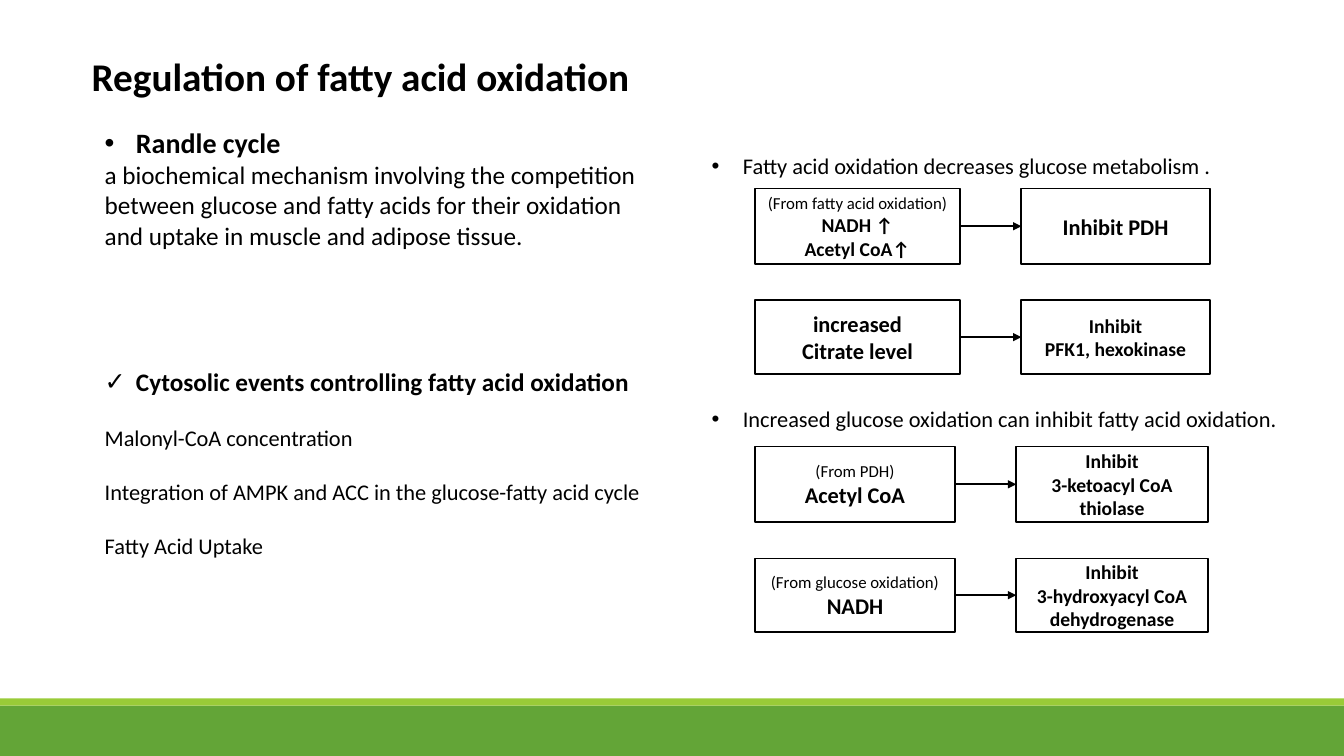
import pptx
import pptx.util
import pptx.dml.color
import pptx.enum.shapes
import pptx.enum.text
import pptx.oxml.ns
import lxml.etree

Inches, Pt = pptx.util.Inches, pptx.util.Pt
ALIGN, ANCHOR = pptx.enum.text.PP_ALIGN, pptx.enum.text.MSO_ANCHOR
RECTANGLE = pptx.enum.shapes.MSO_SHAPE.RECTANGLE
STRAIGHT = pptx.enum.shapes.MSO_CONNECTOR.STRAIGHT

BLACK, WHITE, GREEN, LIME = "000000", "FFFFFF", "63A537", "99CB38"
WIDTH, HEIGHT = 13.33, 7.5


def color(value):
    return pptx.dml.color.RGBColor.from_string(value)


def sub(parent, tag, **attributes):
    return lxml.etree.SubElement(parent, pptx.oxml.ns.qn(tag), **attributes)


def write(frame, text, size=16, bold=False, align=ALIGN.LEFT, before=0, bullet=None):
    """Add one paragraph, using the first one while the frame is empty."""
    paragraph = frame.add_paragraph() if frame.text else frame.paragraphs[0]
    paragraph.alignment = align
    paragraph.space_before = Pt(before)
    run = paragraph.add_run()
    run.text = text
    run.font.name, run.font.size, run.font.bold = "Calibri", Pt(size), bold
    run.font.color.rgb = color(BLACK)
    if bullet:
        properties = paragraph._p.get_or_add_pPr()
        indent = Inches(0.31)
        properties.set("marL", str(indent))
        properties.set("indent", str(-indent))
        sub(properties, "a:buFont", typeface="Arial")
        sub(properties, "a:buChar", char=bullet)


def text_area(slide, left, top, width, height):
    frame = slide.shapes.add_textbox(
        Inches(left), Inches(top), Inches(width), Inches(height)).text_frame
    frame.word_wrap = True
    return frame


def rectangle(slide, left, top, width, height, fill, line=None):
    shape = slide.shapes.add_shape(
        RECTANGLE, Inches(left), Inches(top), Inches(width), Inches(height))
    shape.shadow.inherit = False
    shape.fill.solid()
    shape.fill.fore_color.rgb = color(fill)
    if line:
        shape.line.color.rgb = color(line)
        shape.line.width = Pt(1.25)
    else:
        shape.line.fill.background()
    return shape


def footer_bands(slide):
    rectangle(slide, 0, 7, WIDTH, 0.5, GREEN)
    rectangle(slide, 0, 6.93, WIDTH, 0.07, LIME)


def heading(slide, left, top, width, height):
    title = slide.shapes.title
    title.left, title.top = Inches(left), Inches(top)
    title.width, title.height = Inches(width), Inches(height)
    title.text_frame.auto_size = pptx.enum.text.MSO_AUTO_SIZE.NONE
    title.text_frame.vertical_anchor = ANCHOR.TOP
    write(title.text_frame, "Regulation of fatty acid oxidation", size=28, bold=True)


def overview(slide, left, top, width, height):
    frame = text_area(slide, left, top, width, height)
    write(frame, "Randle cycle", size=20, bold=True, bullet="•")
    write(frame, "a biochemical mechanism involving the competition between glucose and "
          "fatty acids for their oxidation and uptake in muscle and adipose tissue.", size=18)
    write(frame, "Cytosolic events controlling fatty acid oxidation",
          size=18, bold=True, before=83, bullet="✓")
    for event in ("Malonyl-CoA concentration",
                  "Integration of AMPK and ACC in the glucose-fatty acid cycle",
                  "Fatty Acid Uptake"):
        write(frame, event, before=19.5)


def node(slide, left, top, width, height, lines):
    box = rectangle(slide, left, top, width, height, WHITE, BLACK)
    box.text_frame.word_wrap = True
    box.text_frame.vertical_anchor = ANCHOR.MIDDLE
    for text, size in lines:
        # 12 pt lines name the source of the signal and stay regular
        write(box.text_frame, text, size=size, bold=size > 12, align=ALIGN.CENTER)
    return box


def arrow(slide, cause, effect):
    link = slide.shapes.add_connector(STRAIGHT, 0, 0, 0, 0)
    link.begin_connect(cause, 3)
    link.end_connect(effect, 1)
    link.line.color.rgb = color(BLACK)
    link.line.width = Pt(1.5)
    sub(link.line._get_or_add_ln(), "a:tailEnd", type="triangle")
    sub(link._element.spPr, "a:effectLst")


def inhibition(slide, left, top, statement, cause_width, effect_width, pairs):
    """A bulleted statement above rows of cause -> effect boxes."""
    write(text_area(slide, left, top, 5.89, 0.37), statement, bullet="•")
    cause_left = left + 0.53
    effect_left = cause_left + cause_width + 0.61
    row_top = top + 0.41 if len(statement) < 55 else top + 0.46
    for row, (cause_lines, effect_lines) in enumerate(pairs):
        y, height = row_top + 1.11 * row, 0.75 - 0.02 * row
        cause = node(slide, cause_left, y, cause_width, height, cause_lines)
        effect = node(slide, effect_left, y, effect_width, height, effect_lines)
        arrow(slide, cause, effect)


def main():
    deck = pptx.Presentation()
    deck.slide_width, deck.slide_height = Inches(WIDTH), Inches(HEIGHT)
    slide = deck.slides.add_slide(deck.slide_layouts[5])

    footer_bands(slide)
    heading(slide, 0.81, 0.47, 5.81, 0.57)
    overview(slide, 0.94, 1.2, 5.71, 4.48)

    # Fatty acids acting on glucose
    inhibition(slide, 6.96, 1.46, "Fatty acid oxidation decreases glucose metabolism .",
               2.03, 1.87, [
                   ([("(From fatty acid oxidation)", 12), ("NADH ↑", 14), ("Acetyl CoA↑", 14)],
                    [("Inhibit PDH", 16)]),
                   ([("increased", 16), ("Citrate level", 16)],
                    [("Inhibit", 14), ("PFK1, hexokinase", 14)]),
               ])
    # Glucose acting on fatty acids
    inhibition(slide, 6.96, 3.97, "Increased glucose oxidation can inhibit fatty acid oxidation.",
               1.98, 1.9, [
                   ([("(From PDH)", 12), ("Acetyl CoA", 16)],
                    [("Inhibit", 14), ("3-ketoacyl CoA", 14), ("thiolase", 14)]),
                   ([("(From glucose oxidation)", 12), ("NADH", 16)],
                    [("Inhibit", 14), ("3-hydroxyacyl CoA", 14), ("dehydrogenase", 14)]),
               ])
    deck.save("out.pptx")


if __name__ == "__main__":
    main()
